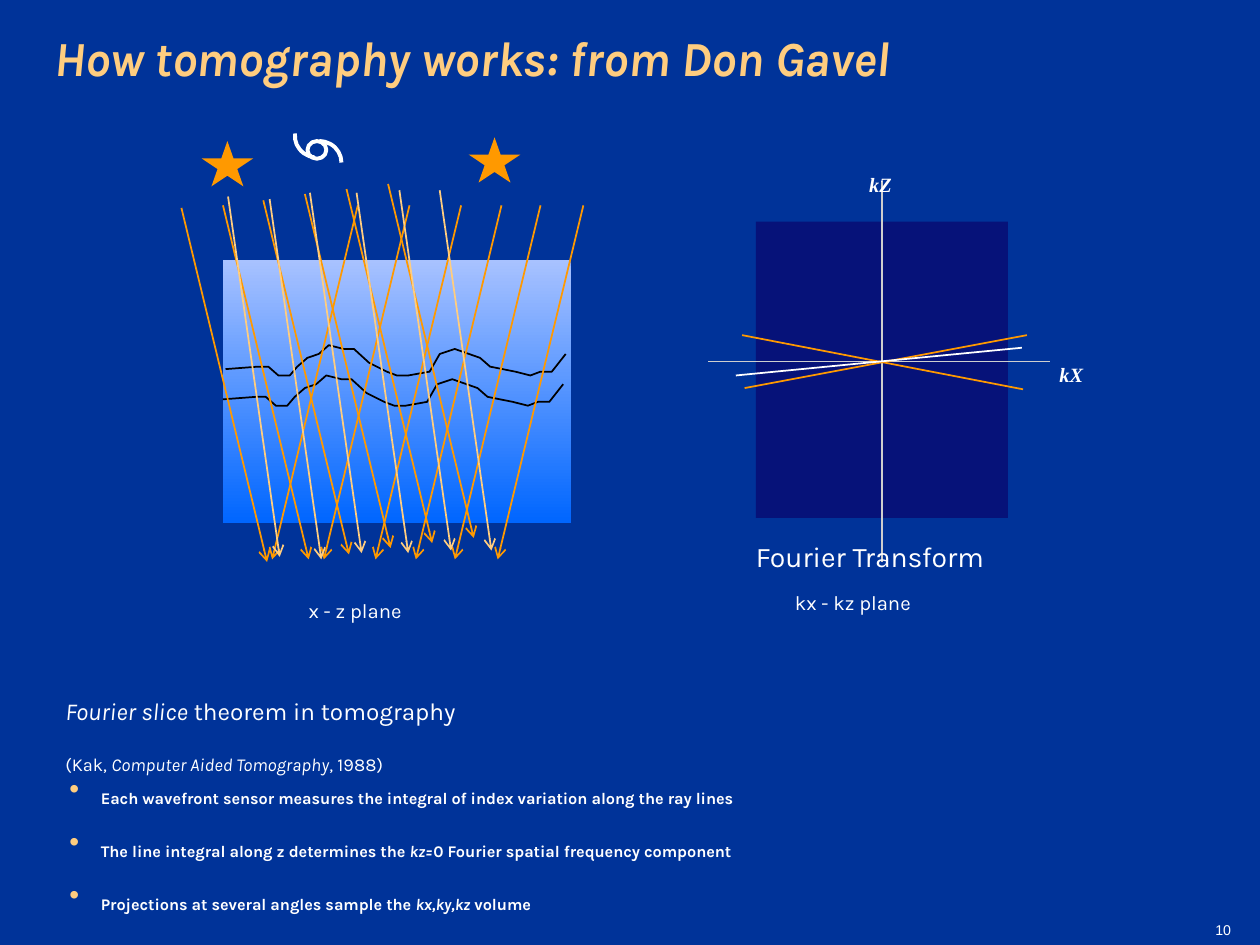
import pptx
import pptx.util
import pptx.dml.color
import pptx.enum.shapes
import pptx.enum.text
import pptx.oxml.ns
from lxml import etree
from pptx.util import Inches

COLORS = {
    "background": "003399", "text": "FFFFFF", "accent": "FFCD7F",
    "guide star": "FF9900", "axis": "CECECE", "k space": "061279",
    "sky": "A8C2FF", "ground": "0066FF", "wavefront": "000000",
}
RGB = {part: pptx.dml.color.RGBColor.from_string(value) for part, value in COLORS.items()}
SHAPE = pptx.enum.shapes.MSO_SHAPE
qn = pptx.oxml.ns.qn


def write(frame, paragraphs, font="Karla", color="text", bold=False, baseline=-25000):
    """Fill a frame from (size, runs) pairs, where runs are (text, italic) pairs."""
    frame.word_wrap = True
    frame.auto_size = pptx.enum.text.MSO_AUTO_SIZE.NONE
    for number, (size, runs) in enumerate(paragraphs):
        paragraph = frame.add_paragraph() if number else frame.paragraphs[0]
        paragraph.alignment = pptx.enum.text.PP_ALIGN.LEFT
        for text, italic in runs:
            run = paragraph.add_run()
            run.text = text
            run.font.size = pptx.util.Pt(size)
            run.font.name = font
            run.font.bold = bold
            run.font.italic = italic
            run.font.color.rgb = RGB[color]
            run.font._element.set("baseline", str(baseline))


def draw_line(start, end, color, arrow=False):
    line = slide.shapes.add_connector(
        pptx.enum.shapes.MSO_CONNECTOR.STRAIGHT,
        *(Inches(value) for value in (*start, *end)))
    line.line.color.rgb = RGB[color]
    line.line.width = pptx.util.Pt(1)
    if arrow:
        etree.SubElement(line.line._get_or_add_ln(), qn("a:tailEnd"), type="arrow")
    etree.SubElement(line._element.spPr, qn("a:effectLst"))


presentation = pptx.Presentation()
presentation.slide_width = Inches(10)
presentation.slide_height = Inches(7.5)
slide = presentation.slides.add_slide(presentation.slide_layouts[1])
slide.background.fill.solid()
slide.background.fill.fore_color.rgb = RGB["background"]

# Title and findings
title = slide.shapes.title
title.left, title.top, title.width, title.height = (
    Inches(value) for value in (0.33, -0.17, 9, 1.25))
title.text_frame.vertical_anchor = pptx.enum.text.MSO_ANCHOR.MIDDLE
write(title.text_frame, [(28, [("How tomography works: from Don Gavel", True)])],
      color="accent", bold=True, baseline=0)

findings = slide.placeholders[1]
findings.left, findings.top, findings.width, findings.height = (
    Inches(value) for value in (0.45, 6, 9.55, 1.08))
write(findings.text_frame, [
    (16, [("Each wavefront sensor measures the integral of index variation "
           "along the ray lines", False)]),
    (16, [("The line integral along z determines the ", False), ("kz=", True),
          ("0 Fourier spatial frequency component", False)]),
    (16, [("Projections at several angles sample the ", False), ("kx,ky,kz", True),
          (" volume", False)]),
], bold=True)
for finding in findings.text_frame.paragraphs:
    finding.line_spacing = 1.2
    finding.space_before = pptx.util.Pt(4)
    properties = finding._p.get_or_add_pPr()
    properties.set("marL", str(Inches(0.25)))
    properties.set("indent", str(Inches(-0.25)))
    bullet_color = etree.SubElement(properties, qn("a:buClr"))
    etree.SubElement(bullet_color, qn("a:srgbClr"), val=COLORS["accent"])
    etree.SubElement(properties, qn("a:buFont"), typeface="Arial")
    etree.SubElement(properties, qn("a:buChar"), char="•")

# Fourier plane
k_space = slide.shapes.add_shape(SHAPE.RECTANGLE, Inches(6), Inches(1.76), Inches(2), Inches(2.35))
k_space.fill.solid()
k_space.fill.fore_color.rgb = RGB["k space"]
k_space.line.fill.background()
k_space.shadow.inherit = False

for start, end, color in [
    ((8.33, 2.87), (5.62, 2.87), "axis"),
    ((7, 1.44), (7, 4.46), "axis"),
    ((8.15, 2.66), (5.91, 3.08), "guide star"),
    ((5.89, 2.66), (8.12, 3.09), "guide star"),
    ((8.11, 2.76), (5.84, 2.98), "text"),
]:
    draw_line(start, end, color)

# Atmosphere with two wavefronts of the same outline
atmosphere = slide.shapes.add_shape(
    SHAPE.RECTANGLE, Inches(1.77), Inches(2.06), Inches(2.76), Inches(2.09))
atmosphere.fill.gradient()
atmosphere.fill.gradient_angle = 270
for stop, color in zip(atmosphere.fill.gradient_stops, ("sky", "ground")):
    stop.color.rgb = RGB[color]
atmosphere.line.fill.background()
atmosphere.shadow.inherit = False

WAVEFRONT = [
    (4.47, 3.05), (4.36, 3.19), (4.27, 3.19), (4.19, 3.22), (4.07, 3.19),
    (3.87, 3.15), (3.79, 3.08), (3.59, 3.01), (3.47, 3.05), (3.39, 3.19),
    (3.22, 3.22), (3.13, 3.22), (3.05, 3.19), (2.91, 3.12), (2.79, 3.01),
    (2.71, 3.01), (2.59, 2.98), (2.51, 3.05), (2.42, 3.08), (2.34, 3.15),
    (2.28, 3.22), (2.19, 3.22), (2.11, 3.15), (2.03, 3.15), (1.77, 3.17),
]
for shift_x, shift_y in [(0, 0), (0.02, -0.24)]:
    points = [(Inches(x + shift_x), Inches(y + shift_y)) for x, y in WAVEFRONT]
    builder = slide.shapes.build_freeform(*points[0])
    builder.add_line_segments(points[1:], close=False)
    wavefront = builder.convert_to_shape()
    wavefront.fill.background()
    wavefront.line.color.rgb = RGB["wavefront"]
    wavefront.line.width = pptx.util.Pt(1)
    wavefront.shadow.inherit = False

# Light sources: two guide stars and a galaxy
for left, top in [(1.6, 1.12), (3.72, 1.09)]:
    star = slide.shapes.add_shape(
        SHAPE.STAR_5_POINT, Inches(left), Inches(top), Inches(0.41), Inches(0.36))
    star.fill.solid()
    star.fill.fore_color.rgb = RGB["guide star"]
    star.line.fill.background()
    star.shadow.inherit = False

for preset, left, top, width, height, rotation in [
    (SHAPE.OVAL, 2.44, 1.12, 0.15, 0.14, 0),
    (SHAPE.ARC, 2.36, 1.12, 0.35, 0.34, 0),
    (SHAPE.ARC, 2.34, 0.91, 0.35, 0.34, 186.7),
]:
    galaxy = slide.shapes.add_shape(
        preset, Inches(left), Inches(top), Inches(width), Inches(height))
    galaxy.rotation = rotation
    galaxy.fill.background()
    galaxy.line.color.rgb = RGB["text"]
    galaxy.line.width = pptx.util.Pt(2.25)
    galaxy.shadow.inherit = False

# Parallel rays from each source
for color, run_x, run_y, starts in [
    ("guide star", 0.68, 2.81, [(1.44, 1.65), (1.77, 1.63), (2.09, 1.59),
                                (2.42, 1.54), (2.75, 1.5), (3.08, 1.46)]),
    ("guide star", -0.68, 2.81, [(x, 1.63) for x in (2.84, 3.25, 3.66, 3.98, 4.29, 4.63)]),
    ("accent", 0.41, 2.86, [(1.81, 1.56), (2.14, 1.58), (2.46, 1.53),
                            (2.83, 1.53), (3.17, 1.51), (3.49, 1.51)]),
]:
    for x, y in starts:
        draw_line((x, y), (x + run_x, y + run_y), color, arrow=True)

# Labels
for left, top, width, height, font, bold, paragraphs in [
    (8.31, 2.64, 0.54, 0.44, "Times New Roman", True, [(20, [("kX", True)])]),
    (6.8, 1.13, 0.53, 0.44, "Times New Roman", True, [(20, [("kZ", True)])]),
    (0.42, 5.25, 8.25, 0.8, "Karla", False, [
        (24, [("Fourier slice", True), (" theorem in tomography", False)]),
        (18, [("(Kak, ", False), ("Computer Aided Tomography", True), (", 1988)", False)])]),
    (5.9, 3.97, 2.29, 0.41, "Karla", False, [(28, [("Fourier Transform", False)])]),
    (2.35, 4.51, 1.52, 0.44, "Karla", False, [(20, [("x - z plane", False)])]),
    (6.21, 4.45, 1.72, 0.44, "Karla", False, [(20, [("kx - kz plane", False)])]),
    (7.54, 7.13, 2.33, 0.22, "Arial", False, [(14, [("10", False)])]),
]:
    label = slide.shapes.add_textbox(Inches(left), Inches(top), Inches(width), Inches(height))
    write(label.text_frame, paragraphs, font=font, bold=bold)
    for paragraph in label.text_frame.paragraphs[1:]:
        paragraph.space_before = pptx.util.Pt(4)
page_number = label
page_number.text_frame.paragraphs[0].alignment = pptx.enum.text.PP_ALIGN.RIGHT

presentation.save("out.pptx")
